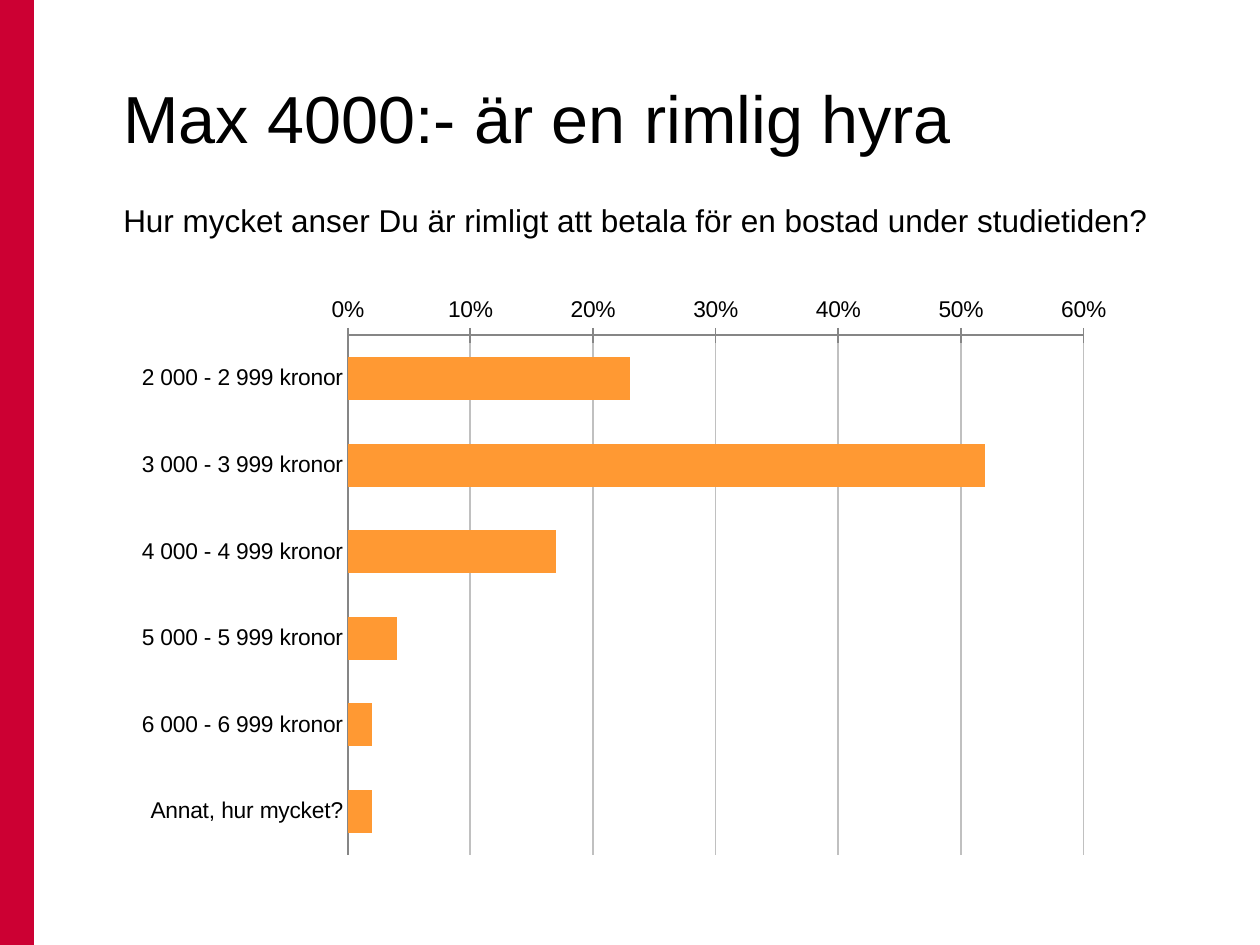
from lxml import etree
from pptx import Presentation
from pptx.chart.data import CategoryChartData
from pptx.dml.color import RGBColor
from pptx.enum.chart import XL_CHART_TYPE, XL_TICK_MARK
from pptx.enum.shapes import MSO_SHAPE
from pptx.enum.text import MSO_ANCHOR
from pptx.oxml.ns import qn
from pptx.util import Inches, Pt

BAR_CLUSTERED = XL_CHART_TYPE.BAR_CLUSTERED
TICK_CROSS = XL_TICK_MARK.CROSS
TICK_NONE = XL_TICK_MARK.NONE
RECTANGLE = MSO_SHAPE.RECTANGLE
TOP = MSO_ANCHOR.TOP
MIDDLE = MSO_ANCHOR.MIDDLE

FONT = "Arial"
COLORS = {
    "band": "CC0033",
    "text": "000000",
    "bar": "FF9933",
    "grid": "C0C0C0",
    "axis": "868686",
}
RENT_SHARES = {
    "2 000 - 2 999 kronor": 0.23,
    "3 000 - 3 999 kronor": 0.52,
    "4 000 - 4 999 kronor": 0.17,
    "5 000 - 5 999 kronor": 0.04,
    "6 000 - 6 999 kronor": 0.02,
    "Annat, hur mycket?": 0.02,
}


class SlideBuilder:
    def __init__(self, slide):
        self.slide = slide

    def color(self, name):
        return RGBColor.from_string(COLORS[name])

    def style_font(self, font, size):
        font.name = FONT
        font.size = Pt(size)
        font.color.rgb = self.color("text")

    def style_line(self, line, color):
        line.color.rgb = self.color(color)
        line.width = Pt(1)

    def band(self, left, top, width, height):
        shape = self.slide.shapes.add_shape(
            RECTANGLE, Inches(left), Inches(top), Inches(width), Inches(height))
        shape.shadow.inherit = False
        shape.fill.solid()
        shape.fill.fore_color.rgb = self.color("band")
        shape.line.fill.background()

    def text(self, content, left, top, width, height, size, anchor=TOP):
        shape = self.slide.shapes.add_textbox(
            Inches(left), Inches(top), Inches(width), Inches(height))
        frame = shape.text_frame
        frame.word_wrap = True
        frame.vertical_anchor = anchor
        paragraph = frame.paragraphs[0]
        paragraph.text = content
        self.style_font(paragraph.font, size)

    def bar_chart(self, shares, left, top, width, height, plot):
        data = CategoryChartData(number_format="0%")
        data.categories = list(shares)
        data.add_series("Series 1", list(shares.values()))
        chart = self.slide.shapes.add_chart(
            BAR_CLUSTERED, Inches(left), Inches(top), Inches(width), Inches(height), data).chart
        chart.has_legend = False
        chart.has_title = False
        self.style_font(chart.font, 18)
        bars = chart.plots[0]
        bars.gap_width = 100
        bars.vary_by_categories = False
        fill = bars.series[0].format.fill
        fill.solid()
        fill.fore_color.rgb = self.color("bar")
        for axis, tick in ((chart.category_axis, TICK_NONE), (chart.value_axis, TICK_CROSS)):
            axis.major_tick_mark = tick
            axis.minor_tick_mark = TICK_NONE
            self.style_font(axis.tick_labels.font, 13)
            self.style_line(axis.format.line, "axis")
        chart.category_axis.reverse_order = True
        value_axis = chart.value_axis
        value_axis.minimum_scale = 0
        value_axis.maximum_scale = 0.6
        value_axis.major_unit = 0.1
        value_axis.tick_labels.number_format = "0%"
        value_axis.tick_labels.number_format_is_linked = False
        value_axis.has_major_gridlines = True
        self.style_line(value_axis.major_gridlines.format.line, "grid")
        self.place_plot(chart, plot)

    def place_plot(self, chart, plot):
        plot_area = chart.element.find(".//" + qn("c:plotArea"))
        for existing in plot_area.findall(qn("c:layout")):
            plot_area.remove(existing)
        layout = etree.Element(qn("c:layout"))
        plot_area.insert(0, layout)
        manual = etree.SubElement(layout, qn("c:manualLayout"))
        settings = {"layoutTarget": "inner", "xMode": "edge", "yMode": "edge", **plot}
        for tag, value in settings.items():
            etree.SubElement(manual, qn("c:" + tag)).set("val", str(value))


def main():
    presentation = Presentation()
    presentation.slide_width = Inches(10)
    presentation.slide_height = Inches(7.5)
    builder = SlideBuilder(presentation.slides.add_slide(presentation.slide_layouts[6]))
    builder.band(0, 0, 0.27, 7.5)
    builder.text("Max 4000:- är en rimlig hyra", 0.88, 0.3, 8.39, 1.25, 38, MIDDLE)
    builder.text("Hur mycket anser Du är rimligt att betala för en bostad under studietiden?",
                 0.88, 1.55, 8.39, 0.4, 18)
    builder.bar_chart(RENT_SHARES, 1, 2.25, 8, 4.58,
                      {"x": 0.22, "y": 0.09, "w": 0.73, "h": 0.9})
    presentation.save("out.pptx")


if __name__ == "__main__":
    main()
